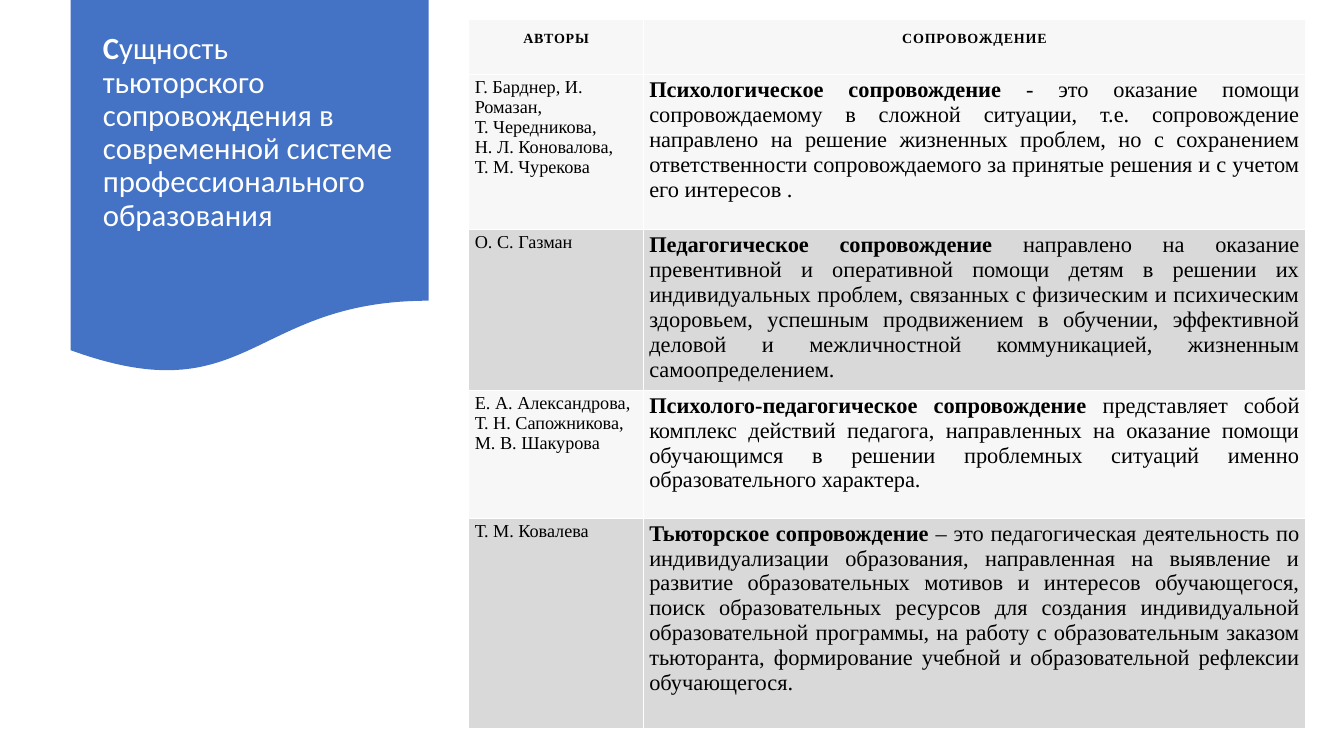
from pptx import Presentation
from pptx.dml.color import RGBColor as RGB
from pptx.enum.shapes import MSO_SHAPE as SHAPE
from pptx.enum.text import MSO_ANCHOR as ANCHOR, PP_ALIGN as ALIGN
from pptx.util import Inches, Pt

COLORS = {"blue": "4472C4", "white": "FFFFFF", "black": "000000",
          "light": "F7F7F7", "gray": "D9D9D9"}
SERIF = "Times New Roman"

TITLE = [("С", True),
         ("ущность тьюторского сопровождения в современной системе "
          "профессионального образования", False)]
HEADS = ["АВТОРЫ", "СОПРОВОЖДЕНИЕ"]
# Authors, term, definition
ROWS = [
    (["Г. Барднер, И. Ромазан,", "Т. Чередникова,", "Н. Л. Коновалова,",
      "Т. М. Чурекова"],
     "Психологическое сопровождение ",
     "- это оказание помощи сопровождаемому в сложной ситуации, т.е. "
     "сопровождение направлено на решение жизненных проблем, но с "
     "сохранением ответственности сопровождаемого за принятые решения и "
     "с учетом его интересов ."),
    (["О. С. Газман"],
     "Педагогическое сопровождение ",
     "направлено на оказание превентивной и оперативной помощи детям в "
     "решении их индивидуальных проблем, связанных с физическим и "
     "психическим здоровьем, успешным продвижением в обучении, эффективной "
     "деловой и межличностной коммуникацией, жизненным самоопределением."),
    (["Е. А. Александрова,", "Т. Н. Сапожникова,", "М. В. Шакурова"],
     "Психолого-педагогическое сопровождение ",
     "представляет собой комплекс действий педагога, направленных на "
     "оказание помощи обучающимся в решении проблемных ситуаций именно "
     "образовательного характера."),
    (["Т. М. Ковалева"],
     "Тьюторское сопровождение ",
     "– это педагогическая деятельность по индивидуализации образования, "
     "направленная на выявление и развитие образовательных мотивов и "
     "интересов обучающегося, поиск образовательных ресурсов для создания "
     "индивидуальной образовательной программы, на работу с образовательным "
     "заказом тьюторанта, формирование учебной и образовательной рефлексии "
     "обучающегося."),
]
COLS = [1.73, 6.57]
HEIGHTS = [0.55, 1.54, 1.54, 1.27, 2.09]


def color(name):
    return RGB.from_string(COLORS[name])


def add_run(para, text, size, bold=False, font=SERIF, ink="black"):
    run = para.add_run()
    run.text = text
    run.font.size = Pt(size)
    run.font.bold = bold
    run.font.name = font
    run.font.color.rgb = color(ink)
    return run


def add_banner(slide, left, top, width, height):
    """Blue wavy banner with the title on it."""
    title = slide.shapes.title
    wave = slide.shapes.add_shape(SHAPE.FLOWCHART_DOCUMENT, Inches(left),
                                  Inches(top), Inches(width), Inches(height))
    wave.shadow.inherit = False
    wave.fill.solid()
    wave.fill.fore_color.rgb = color("blue")
    wave.line.fill.background()
    title.element.addprevious(wave.element)  # banner goes behind the title

    title.left, title.top = Inches(left + 0.22), Inches(top + 0.19)
    title.width, title.height = Inches(width - 0.44), Inches(2.59)
    frame = title.text_frame
    frame.word_wrap = True
    frame.vertical_anchor = ANCHOR.MIDDLE
    frame.margin_bottom = Inches(0.38)
    para = frame.paragraphs[0]
    para.alignment = ALIGN.LEFT
    para.line_spacing = 0.9
    for text, bold in TITLE:
        add_run(para, text, 22, bold, "Calibri", "white")


def set_cell(cell, fill, sides, top, bottom):
    cell.fill.solid()
    cell.fill.fore_color.rgb = color(fill)
    cell.vertical_anchor = ANCHOR.TOP
    cell.margin_left = cell.margin_right = Inches(sides)
    cell.margin_top, cell.margin_bottom = Inches(top), Inches(bottom)
    return cell.text_frame


def add_grid(slide, left, top):
    """Table of authors and their definitions."""
    grid = slide.shapes.add_table(
        len(HEIGHTS), len(COLS), Inches(left), Inches(top),
        Inches(sum(COLS)), Inches(sum(HEIGHTS))).table
    grid.first_row = grid.horz_banding = False
    for col, width in zip(grid.columns, COLS):
        col.width = Inches(width)
    for row, height in zip(grid.rows, HEIGHTS):
        row.height = Inches(height)

    # Header row
    for j, head in enumerate(HEADS):
        para = set_cell(grid.cell(0, j), "light", 0.12, 0.12, 0.12).paragraphs[0]
        para.alignment = ALIGN.CENTER
        run = add_run(para, head, 10, True)
        run.font._element.set("spc", "60")

    # Body rows
    for i, (names, term, text) in enumerate(ROWS, 1):
        fill = "light" if i % 2 else "gray"
        who, what = [set_cell(grid.cell(i, j), fill, 0.06, 0.03, 0.08)
                     for j in range(2)]
        for n, name in enumerate(names):
            para = who.add_paragraph() if n else who.paragraphs[0]
            add_run(para, name, 13)
        para = what.paragraphs[0]
        para.alignment = ALIGN.JUSTIFY
        add_run(para, term, 16, True)
        add_run(para, text, 16)


def main():
    deck = Presentation()
    deck.slide_width, deck.slide_height = Inches(13.33), Inches(7.5)
    slide = deck.slides.add_slide(deck.slide_layouts[5])
    add_banner(slide, 0.7, 0, 3.55, 3.72)
    add_grid(slide, 4.65, 0.19)
    deck.save("out.pptx")


if __name__ == "__main__":
    main()
